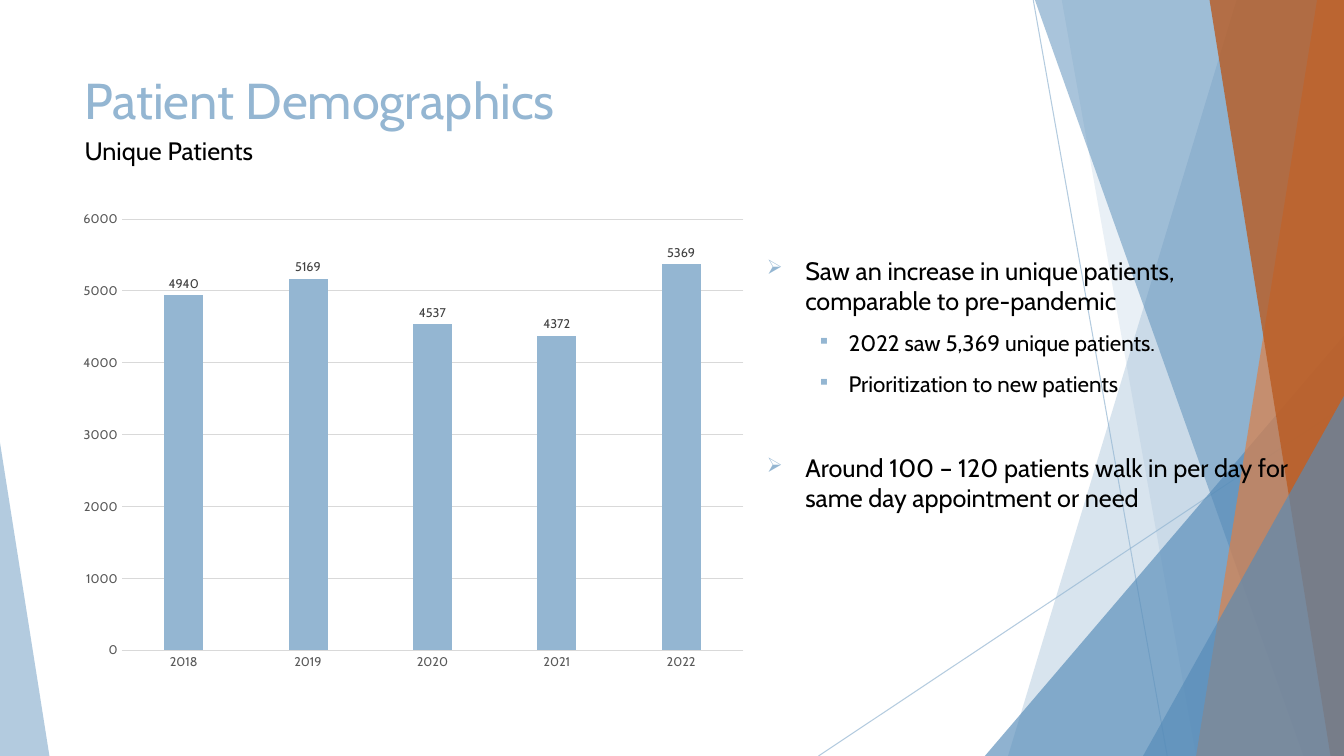
import pptx
import pptx.util
import pptx.dml.color
import pptx.chart.data
import pptx.enum.chart
import pptx.enum.shapes
import pptx.oxml
import pptx.oxml.ns

Pt = pptx.util.Pt
Inches = pptx.util.Inches
qn = pptx.oxml.ns.qn
sub = pptx.oxml.xmlchemy.OxmlElement
enum = pptx.enum.chart
kinds = pptx.enum.shapes

face = "Cabin"
pale, blue, rust, grey = "94B6D2", "558BB8", "B95B22", "D9D9D9"


def tint(code):
    return pptx.dml.color.RGBColor.from_string(code)


def fade(shape, share):
    for node in shape._element.iter(qn("a:srgbClr")):
        alpha = sub("a:alpha")
        alpha.set("val", str(share * 1000))
        node.append(alpha)


deck = pptx.Presentation()
deck.slide_width = Inches(13.33)
deck.slide_height = Inches(7.5)
col = deck.slide_width / 100
row = deck.slide_height / 100
slide = deck.slides.add_slide(deck.slide_layouts[6])
shapes = slide.shapes

rays = [(76.88, 0, 86.85, 100), (100, 53.73, 60.9, 100)]
for x, y, right, foot in rays:
    ray = shapes.add_connector(
        kinds.MSO_CONNECTOR.STRAIGHT,
        int(x * col), int(y * row), int(right * col), int(foot * row))
    ray.line.color.rgb = tint(pale)
    ray.line.width = Pt(0.75)
    ray._element.spPr.append(sub("a:effectLst"))
    fade(ray, 70)

shards = [
    ("band", 92.1, 75.3, pale, 36),
    ("band", 78.75, 88.73, pale, 20),
    ("peak", 73.28, 44.4, blue, 66),
    ("band", 76.58, 96.83, blue, 50),
    ("band", 97.73, 89.4, "DD8047", 70),
    ("band", 89.7, 98.85, rust, 80),
    ("peak", 85.05, 52.4, blue, 66),
    ("edge", 0, 58.53, pale, 70),
]
for kind, a, b, code, share in shards:
    if kind == "band":
        pen = shapes.build_freeform(a, 0, scale=(col, row))
        pen.add_line_segments([(100, 0), (100, 100), (b, 100)], close=True)
        shard = pen.convert_to_shape()
    else:
        wide = 100 - a if kind == "peak" else 3.68
        shard = shapes.add_shape(
            kinds.MSO_SHAPE.ISOSCELES_TRIANGLE,
            int(a * col), int(b * row), int(wide * col), int((100 - b) * row))
        shard.adjustments[0] = 1 if kind == "peak" else 0
    shard.shadow.inherit = False
    shard.fill.solid()
    shard.fill.fore_color.rgb = tint(code)
    shard.line.fill.background()
    fade(shard, share)

notes = [
    ("Saw an increase in unique patients, comparable to pre-pandemic", 0, 10),
    ("2022 saw 5,369 unique patients.", 1, 10),
    ("Prioritization to new patients", 1, 10),
    ("Around 100 – 120 patients walk in per day for same day appointment or need", 0, 39.5),
]
marks = [("➢", 18, 0.38, 0.38), ("▪", 16, 0.81, 0.31)]
texts = [
    (5.55, 8.53, 70.5, 19.2, "Patient Demographics", 36, pale),
    (56.33, 33.07, 41.03, 54.8, "\n".join(n[0] for n in notes), 18, "000000"),
    (5.55, 17.2, 31.5, 9.47, "Unique Patients", 18, "000000"),
]
frames = []
for x, y, wide, high, words, size, code in texts:
    box = shapes.add_textbox(int(x * col), int(y * row), int(wide * col), int(high * row))
    frame = box.text_frame
    frame.word_wrap = True
    frame.text = words
    for para in frame.paragraphs:
        font = para.runs[0].font
        font.name = face
        font.size = Pt(size)
        font.color.rgb = tint(code)
    frames.append(frame)

for para, (words, level, gap) in zip(frames[1].paragraphs, notes):
    mark, size, left, hang = marks[level]
    para.level = level
    para.space_before = Pt(gap)
    para.runs[0].font.size = Pt(size)
    props = para._p.get_or_add_pPr()
    props.set("marL", str(Inches(left)))
    props.set("indent", str(-Inches(hang)))
    shade = sub("a:buClr")
    paint = sub("a:srgbClr")
    paint.set("val", pale)
    shade.append(paint)
    props.append(shade)
    for tag, key, val in [("a:buSzPct", "val", "80000"), ("a:buChar", "char", mark)]:
        part = sub(tag)
        part.set(key, val)
        props.append(part)

data = pptx.chart.data.CategoryChartData()
data.categories = ["2018", "2019", "2020", "2021", "2022"]
data.add_series("Series 1", [4940, 5169, 4537, 4372, 5369])
chart = shapes.add_chart(
    enum.XL_CHART_TYPE.COLUMN_CLUSTERED,
    int(5.18 * col), int(26.67 * row), int(51.15 * col), int(63.2 * row), data).chart
chart.has_title = False
chart.has_legend = False
chart.font.name = face
chart.font.size = Pt(10)
plot = chart.plots[0]
plot.gap_width = 219
plot.overlap = -27
plot.vary_by_categories = False
bars = plot.series[0].format.fill
bars.solid()
bars.fore_color.rgb = tint(pale)

plot.has_data_labels = True
labels = plot.data_labels
labels.show_value = True
labels.position = enum.XL_LABEL_POSITION.OUTSIDE_END
years, scale = chart.category_axis, chart.value_axis
inks = [(labels, "404040"), (years.tick_labels, "595959"), (scale.tick_labels, "595959")]
for item, code in inks:
    item.font.name = face
    item.font.size = Pt(9)
    item.font.color.rgb = tint(code)
for axis in (years, scale):
    axis.major_tick_mark = enum.XL_TICK_MARK.NONE
    axis.minor_tick_mark = enum.XL_TICK_MARK.NONE
scale.minimum_scale = 0
scale.maximum_scale = 6000
scale.major_unit = 1000
scale.format.line.fill.background()
for line in (years.format.line, scale.major_gridlines.format.line):
    line.color.rgb = tint(grey)
    line.width = Pt(0.75)

deck.save("out.pptx")
